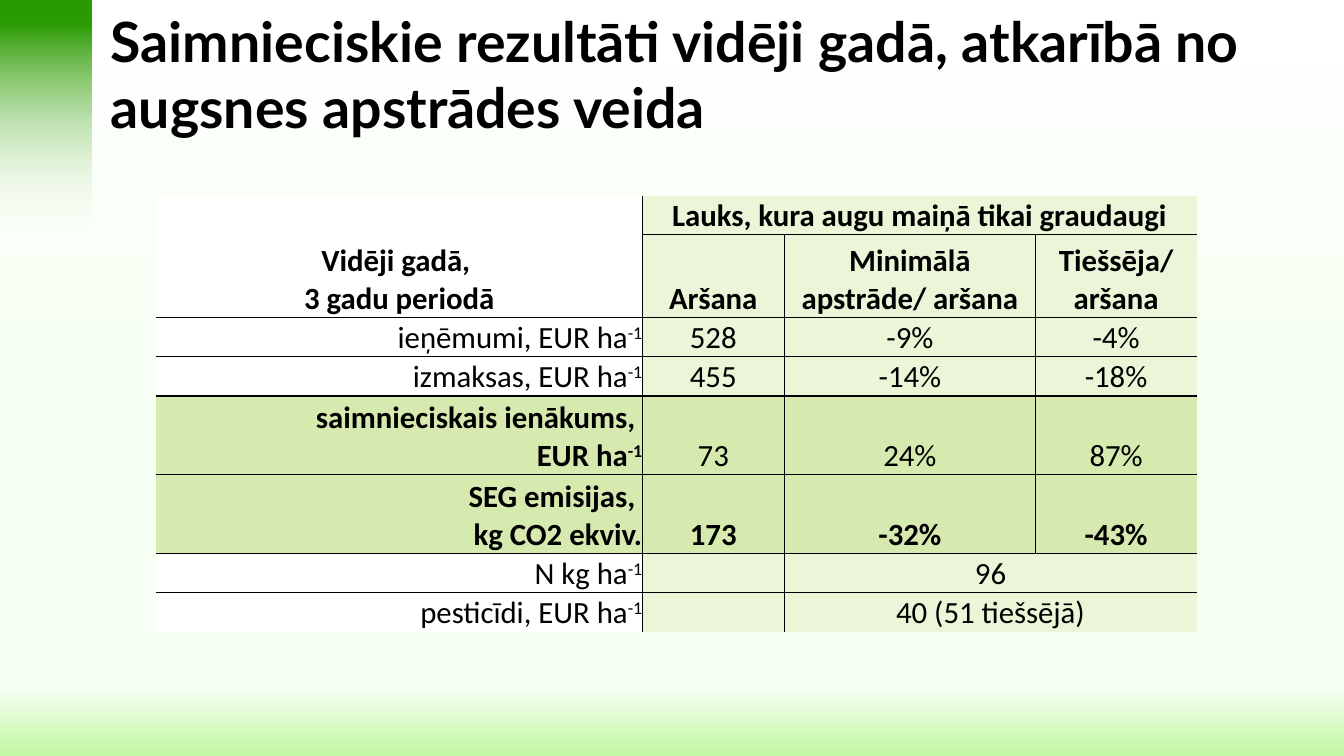
"""Builds a slide with a table of farm results by tillage type."""
from dataclasses import dataclass
from itertools import chain
from lxml.etree import SubElement as Sub
from pptx import Presentation as Deck
from pptx.dml.color import RGBColor as Rgb
from pptx.enum.shapes import MSO_SHAPE as Shape
from pptx.enum.text import MSO_ANCHOR as Anchor, PP_ALIGN as Align
from pptx.oxml.ns import qn
from pptx.util import Pt

SCALE = 9144


@dataclass(frozen=True)
class Theme:
    ink: str = "000000"
    white: str = "FFFFFF"
    pale: str = "EBF5D7"
    green: str = "D6EAAF"
    head_font: str = "Lato"
    font: str = "Calibri"
    head_size: float = 39.6
    size: float = 22
    rule: float = 1
    back: tuple = ((1, "FFFFFF", 100), (50, "F6FFF3", 100),
                   (91, "F6FFF3", 100), (100, "C1F8A2", 100))
    strip: tuple = ((10, "2A9B00", 100), (100, "ECF9DF", 0))
    plain: str = "{2D5ABB26-0587-4C30-8999-92F81FD0307C}"


LOOK = Theme()
COLS = (482, 141, 249, 160)
ROWS = (39, 82, 39, 39, 78, 78, 39, 39)
HEADS = ("Aršana", "Minimālā apstrāde/ aršana", "Tiešsēja/ aršana")
DATA = (
    ("ieņēmumi, EUR ha^-1", False, False, ("528", "-9%", "-4%")),
    ("izmaksas, EUR ha^-1", False, False, ("455", "-14%", "-18%")),
    ("saimnieciskais ienākums, \nEUR ha^-1", True, False, ("73", "24%", "87%")),
    ("SEG emisijas, \nkg CO2 ekviv.", True, True, ("173", "-32%", "-43%")),
    ("N kg ha^-1", False, False, ("", "96")),
    ("pesticīdi, EUR ha^-1", False, False, ("", "40 (51 tiešsējā)")),
)


def px(*nums):
    return [num * SCALE for num in nums]


def blend(node, fill, stops):
    fill.gradient()
    fill.gradient_angle = 270
    group = node.find(".//" + qn("a:gsLst"))
    for old in list(group):
        group.remove(old)
    for place, tone, alpha in stops:
        stop = Sub(group, qn("a:gs"), pos=str(place * 1000))
        paint = Sub(stop, qn("a:srgbClr"), val=tone)
        if alpha < 100:
            Sub(paint, qn("a:alpha"), val=str(alpha * 1000))


def style(font, face, size, bold):
    font.name, font.size, font.bold = face, Pt(size), bold
    font.color.rgb = Rgb.from_string(LOOK.ink)


def write(para, text, face, size, bold):
    """Adds runs; a line feed breaks the line and a caret starts a raised run."""
    for line_no, line in enumerate(text.split("\n")):
        if line_no:
            para.add_line_break()
        for part_no, part in enumerate(line.split("^")):
            run = para.add_run()
            run.text = part
            style(run.font, face, size, bold)
            if part_no:
                run.font._element.set("baseline", "30000")


def edge(cell, side):
    line = Sub(cell._tc.get_or_add_tcPr(), qn("a:ln" + side),
               w=str(Pt(LOOK.rule)))
    Sub(Sub(line, qn("a:solidFill")), qn("a:srgbClr"), val=LOOK.ink)


def put(table, row, col, text, tone, bold, align=Align.CENTER, high=1, wide=1):
    cell = table.cell(row, col)
    if high * wide > 1:
        cell.merge(table.cell(row + high - 1, col + wide - 1))
    inner = {"L": col > 0, "R": col + wide < len(COLS),
             "T": row > 0, "B": row + high < len(ROWS)}
    for side, drawn in inner.items():
        if drawn:
            edge(cell, side)
    cell.fill.solid()
    cell.fill.fore_color.rgb = Rgb.from_string(tone)
    cell.vertical_anchor = Anchor.BOTTOM
    para = cell.text_frame.paragraphs[0]
    para.alignment = align
    if text:
        write(para, text, LOOK.font, LOOK.size, bold)


def add_grid(slide):
    frame = slide.shapes.add_table(len(ROWS), len(COLS),
                                   *px(155, 194, sum(COLS), sum(ROWS)))
    table = frame.table
    table.first_row = table.horz_banding = False
    table._tbl.tblPr.find(qn("a:tableStyleId")).text = LOOK.plain
    for col, wide in zip(table.columns, px(*COLS)):
        col.width = wide
    for row, high in zip(table.rows, px(*ROWS)):
        row.height = high
    for cell in chain.from_iterable(row.cells for row in table.rows):
        cell.margin_left = cell.margin_right = 0
        cell.margin_top = cell.margin_bottom = 0
    return table


def fill_grid(table):
    put(table, 0, 0, "Vidēji gadā, \n3 gadu periodā", LOOK.white, True, high=2)
    put(table, 0, 1, "Lauks, kura augu maiņā tikai graudaugi", LOOK.pale,
        True, wide=3)
    for col, head in enumerate(HEADS, 1):
        put(table, 1, col, head, LOOK.pale, True)
    for row, (label, strong, bold, cells) in enumerate(DATA, 2):
        put(table, row, 0, label, LOOK.green if strong else LOOK.white,
            strong, Align.RIGHT)
        for col, text in enumerate(cells, 1):
            last = col == len(cells)
            put(table, row, col, text, LOOK.green if strong else LOOK.pale,
                bold, wide=len(COLS) - col if last else 1)


def add_strip(slide):
    strip = slide.shapes.add_shape(Shape.RECTANGLE, *px(-3, 0, 94, 229))
    strip.shadow.inherit = False
    strip.line.fill.background()
    blend(strip._element.spPr, strip.fill, LOOK.strip)


def add_title(slide, text):
    frame = slide.shapes.add_textbox(*px(100, 10, 1159, 125)).text_frame
    frame.word_wrap = True
    frame.vertical_anchor = Anchor.MIDDLE
    write(frame.paragraphs[0], text, LOOK.head_font, LOOK.head_size, True)


def main():
    deck = Deck()
    deck.slide_width, deck.slide_height = px(1333, 750)
    slide = deck.slides.add_slide(deck.slide_layouts[6])
    blend(slide._element, slide.background.fill, LOOK.back)
    add_strip(slide)
    add_title(slide, "Saimnieciskie rezultāti vidēji gadā, atkarībā no "
                     "augsnes apstrādes veida")
    fill_grid(add_grid(slide))
    deck.save("out.pptx")


if __name__ == "__main__":
    main()
